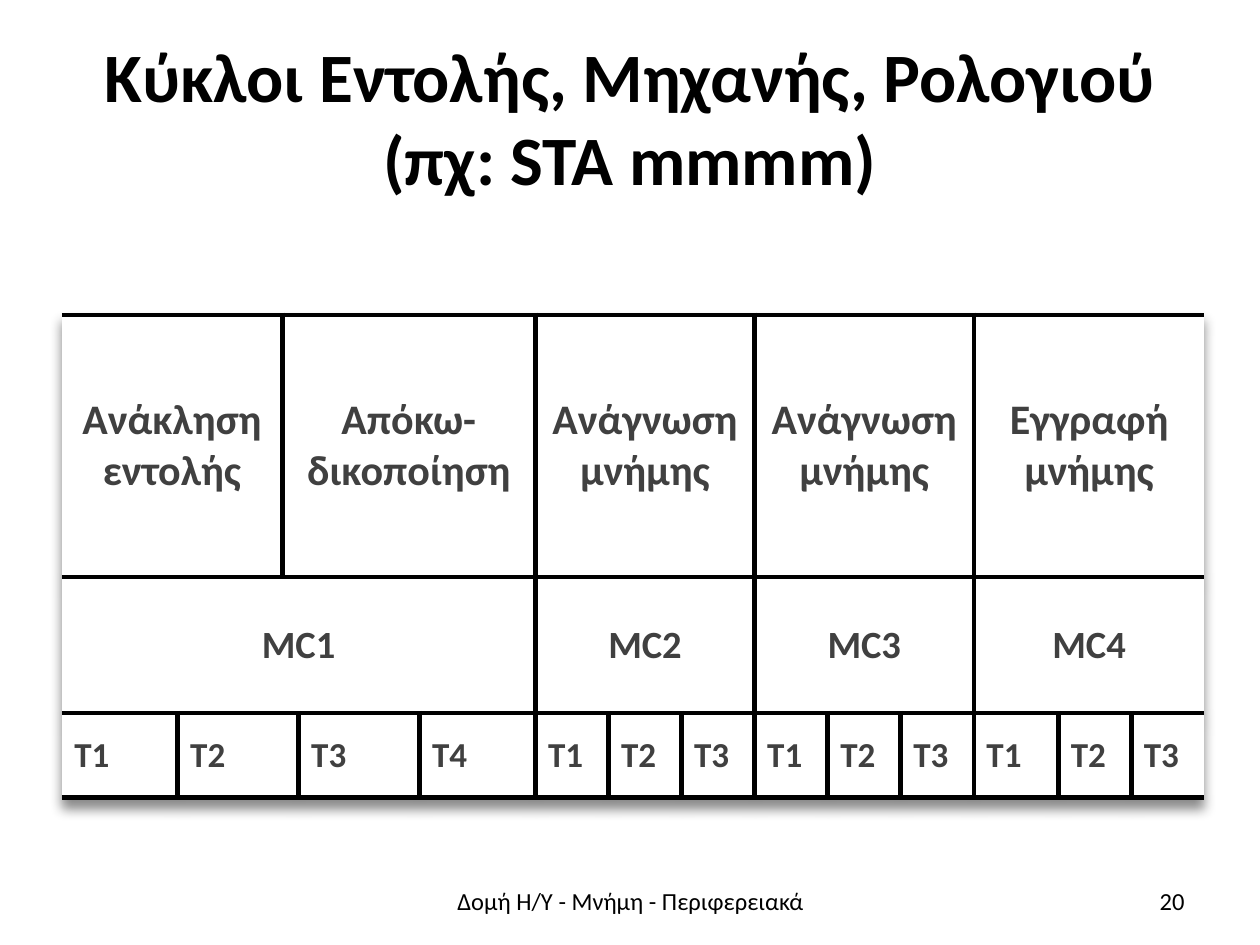
"""Build a slide relating instruction, machine and clock cycles."""
from typing import NamedTuple

from lxml import etree
from pptx import Presentation
from pptx.dml.color import RGBColor
from pptx.enum.text import MSO_ANCHOR, PP_ALIGN
from pptx.oxml.ns import qn
from pptx.slide import Slide
from pptx.table import Table, _Cell
from pptx.text.text import _Paragraph
from pptx.util import Inches, Pt

CENTER, LEFT, RIGHT = PP_ALIGN.CENTER, PP_ALIGN.LEFT, PP_ALIGN.RIGHT
MIDDLE = MSO_ANCHOR.MIDDLE
BLACK, GREY, WHITE = "000000", "404040", "FFFFFF"
FONT = "Calibri"
COLUMN_WIDTHS = [0.92, 0.83, 0.13, 0.96, 0.92, *[0.58] * 6, 0.67, 0.58, 0.58]


class Label(NamedTuple):
    """A text box placed in inches."""

    text: str
    left: float
    top: float
    width: float
    height: float
    size: float
    align: PP_ALIGN
    bold: bool = False


class CycleRow(NamedTuple):
    """A table row of cycles, each cycle spanning some columns."""

    height: float
    size: float
    align: PP_ALIGN
    cycles: list[str]
    spans: list[int]


LABELS = [
    Label("Κύκλοι Εντολής, Μηχανής, Ρολογιού (πχ: STA mmmm)",
          0.5, 0.3, 9, 1.25, 39.6, CENTER, True),
    Label("Δομή Η/Υ - Μνήμη - Περιφερειακά", 3.42, 6.95, 3.17, 0.4, 14, CENTER),
    Label("20", 7.17, 6.95, 2.33, 0.4, 14, RIGHT),
]
CYCLE_ROWS = [
    CycleRow(2.08, 24, CENTER,
             ["Ανάκληση εντολής", "Απόκω-δικοποίηση", "Ανάγνωση μνήμης",
              "Ανάγνωση μνήμης", "Εγγραφή μνήμης"], [2, 3, 3, 3, 3]),
    CycleRow(1.08, 22, CENTER, ["MC1", "MC2", "MC3", "MC4"], [5, 3, 3, 3]),
    CycleRow(0.67, 20, LEFT,
             ["Τ1", "Τ2", "Τ3", "Τ4", *["Τ1", "Τ2", "Τ3"] * 3],
             [1, 2, *[1] * 11]),
]


def color(value: str) -> RGBColor:
    """Turn a hex string into a colour."""
    return RGBColor.from_string(value)


def style_paragraph(paragraph: _Paragraph, size: float, ink: str,
                    align: PP_ALIGN, bold: bool) -> None:
    """Set the alignment and font of a paragraph."""
    paragraph.alignment = align
    font = paragraph.font
    font.name, font.size, font.bold = FONT, Pt(size), bold
    font.color.rgb = color(ink)


def add_label(slide: Slide, label: Label) -> None:
    """Add a vertically centred text box."""
    box = slide.shapes.add_textbox(Inches(label.left), Inches(label.top),
                                   Inches(label.width), Inches(label.height))
    frame = box.text_frame
    frame.word_wrap = True
    frame.vertical_anchor = MIDDLE
    frame.text = label.text
    style_paragraph(frame.paragraphs[0], label.size, BLACK, label.align, label.bold)


def style_cell(cell: _Cell, ruled_sides: str) -> None:
    """Rule the named sides of a cell, clear the others and fill it white."""
    properties = cell._tc.get_or_add_tcPr()
    for side in "LRTB":
        line = etree.SubElement(properties, qn(f"a:ln{side}"), w=str(Pt(3)))
        if side in ruled_sides:
            fill = etree.SubElement(line, qn("a:solidFill"))
            etree.SubElement(fill, qn("a:srgbClr"), val=BLACK)
        else:
            etree.SubElement(line, qn("a:noFill"))
    cell.fill.solid()
    cell.fill.fore_color.rgb = color(WHITE)


def fill_row(table: Table, row_index: int, row: CycleRow) -> None:
    """Merge, style and label the cells of one cycle row."""
    table.rows[row_index].height = Inches(row.height)
    start = 0
    for cycle, span in zip(row.cycles, row.spans):
        end = start + span
        cell = table.cell(row_index, start)
        if span > 1:
            cell.merge(table.cell(row_index, end - 1))
        ruled_sides = "TB" + "L" * (start > 0) + "R" * (end < len(COLUMN_WIDTHS))
        for column in range(start, end):
            style_cell(table.cell(row_index, column), ruled_sides)
        cell.text = cycle
        cell.vertical_anchor = MIDDLE
        style_paragraph(cell.text_frame.paragraphs[0], row.size, GREY, row.align, True)
        start = end


def add_shadow(table: Table) -> None:
    """Cast a soft shadow below the table."""
    effects = etree.Element(qn("a:effectLst"))
    shadow = etree.SubElement(effects, qn("a:outerShdw"), blurRad=str(Pt(7)),
                              dist=str(Pt(5)), dir="5400000", rotWithShape="0")
    tint = etree.SubElement(shadow, qn("a:srgbClr"), val=BLACK)
    etree.SubElement(tint, qn("a:alpha"), val="45000")
    table._tbl.tblPr.insert(0, effects)


def add_cycle_table(slide: Slide) -> None:
    """Add the table of instruction, machine and clock cycles."""
    height = sum(row.height for row in CYCLE_ROWS)
    table = slide.shapes.add_table(
        len(CYCLE_ROWS), len(COLUMN_WIDTHS), Inches(0.49), Inches(2.5),
        Inches(sum(COLUMN_WIDTHS)), Inches(height)).table
    table.first_row = table.horz_banding = False
    for column, width in zip(table.columns, COLUMN_WIDTHS):
        column.width = Inches(width)
    for row_index, row in enumerate(CYCLE_ROWS):
        fill_row(table, row_index, row)
    add_shadow(table)


def main() -> None:
    """Build and save the slide."""
    presentation = Presentation()
    presentation.slide_width, presentation.slide_height = Inches(10), Inches(7.5)
    slide = presentation.slides.add_slide(presentation.slide_layouts[6])
    for label in LABELS:
        add_label(slide, label)
    add_cycle_table(slide)
    presentation.save("out.pptx")


if __name__ == "__main__":
    main()
